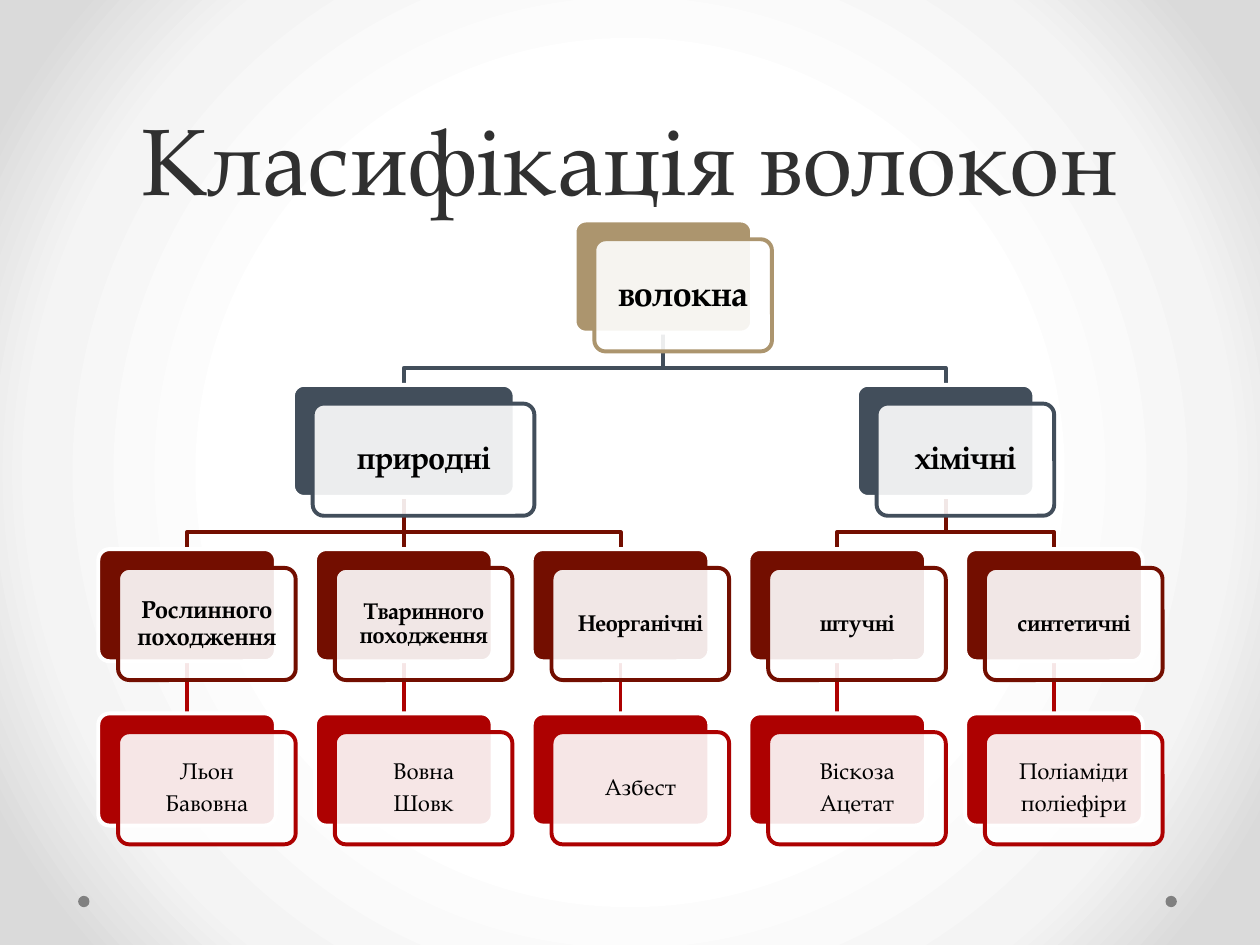
import pptx
import pptx.util
import pptx.dml.color
import pptx.enum.shapes
import pptx.enum.text
import pptx.oxml
import pptx.oxml.ns
from pptx.util import Inches, Pt
from pptx.dml.color import RGBColor
from pptx.oxml.ns import qn

FONT = "TeX Gyre Pagella"
WHITE = RGBColor(0xFF, 0xFF, 0xFF)
BLACK = RGBColor(0, 0, 0)
TITLE_GREY = RGBColor(0x30, 0x30, 0x30)
DOT_GREY = RGBColor(0x80, 0x80, 0x80)
LEVEL_COLORS = [
    RGBColor(0xAC, 0x95, 0x6E),
    RGBColor(0x42, 0x4E, 0x5B),
    RGBColor(0x73, 0x0E, 0x00),
    RGBColor(0xAD, 0x01, 0x01),
]
BACKGROUND_STOPS = [(50, "FFFFFF"), (76, "F4F4F4"), (92, "DADADA")]

CARD_WIDTH, WIDE_CARD, CARD_HEIGHT = 1.41, 1.76, 0.89
TOP, LEVEL_STEP = 1.75, 1.304
COLUMNS = [1.485 + 1.72 * i for i in range(5)]
ROOT, NATURAL, CHEMICAL = 5.265, COLUMNS[1], (COLUMNS[3] + COLUMNS[4]) / 2

# level, centre, parent centre, width, text size, lines
cards = [
    (0, ROOT, None, CARD_WIDTH, 20, ["волокна"]),
    (1, NATURAL, ROOT, WIDE_CARD, 18, ["природні"]),
    (1, CHEMICAL, ROOT, CARD_WIDTH, 18, ["хімічні"]),
]
branches = [
    (NATURAL, 14, "Рослинного походження", ["Льон", "Бавовна"]),
    (NATURAL, 13, "Тваринного походження", ["Вовна", "Шовк"]),
    (NATURAL, 13, "Неорганічні", ["Азбест"]),
    (CHEMICAL, 13, "штучні", ["Віскоза", "Ацетат"]),
    (CHEMICAL, 13, "синтетичні", ["Поліаміди", "поліефіри"]),
]
for column, (parent, size, origin, examples) in zip(COLUMNS, branches):
    cards.append((2, column, parent, CARD_WIDTH, size, [origin]))
    cards.append((3, column, column, CARD_WIDTH, 13, examples))


def add_filled(kind, left, top, width, height, color):
    shape = slide.shapes.add_shape(
        kind, Inches(left), Inches(top), Inches(width), Inches(height))
    shape.shadow.inherit = False
    shape.fill.solid()
    shape.fill.fore_color.rgb = color
    return shape


def add_card_layer(left, top, width, fill, outline):
    layer = add_filled(pptx.enum.shapes.MSO_SHAPE.ROUNDED_RECTANGLE,
                       left, top, width, CARD_HEIGHT, fill)
    layer.adjustments[0] = 0.1
    layer.line.color.rgb = outline
    layer.line.width = Pt(2.25)
    return layer


presentation = pptx.Presentation()
presentation.slide_width, presentation.slide_height = Inches(10), Inches(7.5)
slide = presentation.slides.add_slide(presentation.slide_layouts[5])

# Radial background
slide.background.fill.gradient()
gradient = slide.element.find(".//" + qn("a:gradFill"))
for child in list(gradient):
    gradient.remove(child)
stops = "".join(f'<a:gs pos="{position * 1000}"><a:srgbClr val="{color}"/></a:gs>'
                for position, color in BACKGROUND_STOPS)
namespace = pptx.oxml.ns.nsdecls("a")
gradient.append(pptx.oxml.parse_xml(f"<a:gsLst {namespace}>{stops}</a:gsLst>"))
gradient.append(pptx.oxml.parse_xml(
    f'<a:path {namespace} path="circle">'
    '<a:fillToRect l="50000" t="50000" r="50000" b="50000"/></a:path>'))

for dot_left in (9.25, 0.62):
    dot = add_filled(pptx.enum.shapes.MSO_SHAPE.OVAL, dot_left, 7.11, 0.09, 0.09, DOT_GREY)
    dot.line.fill.background()

# Title
title = slide.shapes.title
title.left, title.top, title.width, title.height = (
    Inches(0.5), Inches(0), Inches(9), Inches(1.75))
title.text_frame.text = "Класифікація волокон"
title.text_frame.auto_size = pptx.enum.text.MSO_AUTO_SIZE.NONE
title.text_frame.vertical_anchor = pptx.enum.text.MSO_ANCHOR.BOTTOM
heading = title.text_frame.paragraphs[0]
heading.alignment = pptx.enum.text.PP_ALIGN.CENTER
heading.line_spacing = Pt(58)
heading.font.name = FONT
heading.font.size = Pt(54)
heading.font.color.rgb = TITLE_GREY

# Branch lines lie behind all cards
for level, centre, parent, width, size, lines in cards:
    if parent is None:
        continue
    end = TOP + level * LEVEL_STEP
    start = end - LEVEL_STEP + CARD_HEIGHT
    bend = start + 0.28
    if parent == centre:
        link = slide.shapes.add_connector(
            pptx.enum.shapes.MSO_CONNECTOR.STRAIGHT,
            Inches(centre), Inches(start), Inches(centre), Inches(end))
        link.element.spPr.append(pptx.oxml.parse_xml(f"<a:effectLst {namespace}/>"))
    else:
        outline = slide.shapes.build_freeform(Inches(parent), Inches(start))
        outline.add_line_segments(
            [(Inches(x), Inches(y)) for x, y in
             ((parent, bend), (centre, bend), (centre, end))], close=False)
        link = outline.convert_to_shape()
        link.shadow.inherit = False
        link.fill.background()
    link.line.color.rgb = LEVEL_COLORS[level]
    link.line.width = Pt(2.25)

# Each card is a coloured back with a translucent front that holds the text
for level, centre, parent, width, size, lines in cards:
    color = LEVEL_COLORS[level]
    left, top = centre - width / 2, TOP + level * LEVEL_STEP
    add_card_layer(left, top, width, color, WHITE)
    front = add_card_layer(left + 0.157, top + 0.149, width, WHITE, color)
    front_color = front.fill._xPr.find(".//" + qn("a:srgbClr"))
    front_color.append(pptx.oxml.parse_xml(f'<a:alpha {namespace} val="90000"/>'))

    frame = front.text_frame
    frame.word_wrap = True
    frame.vertical_anchor = pptx.enum.text.MSO_ANCHOR.MIDDLE
    frame.margin_left = frame.margin_right = Inches(size * 0.004)
    frame.margin_top = frame.margin_bottom = Inches(size * 0.004)
    frame.text = "\n".join(lines)
    for paragraph in frame.paragraphs:
        paragraph.alignment = pptx.enum.text.PP_ALIGN.CENTER
        paragraph.line_spacing = 0.9
        paragraph.space_after = Pt(round(size * 0.35, 1))
        paragraph.font.name = FONT
        paragraph.font.size = Pt(size)
        paragraph.font.bold = level < 3
        paragraph.font.color.rgb = BLACK

presentation.save("out.pptx")
